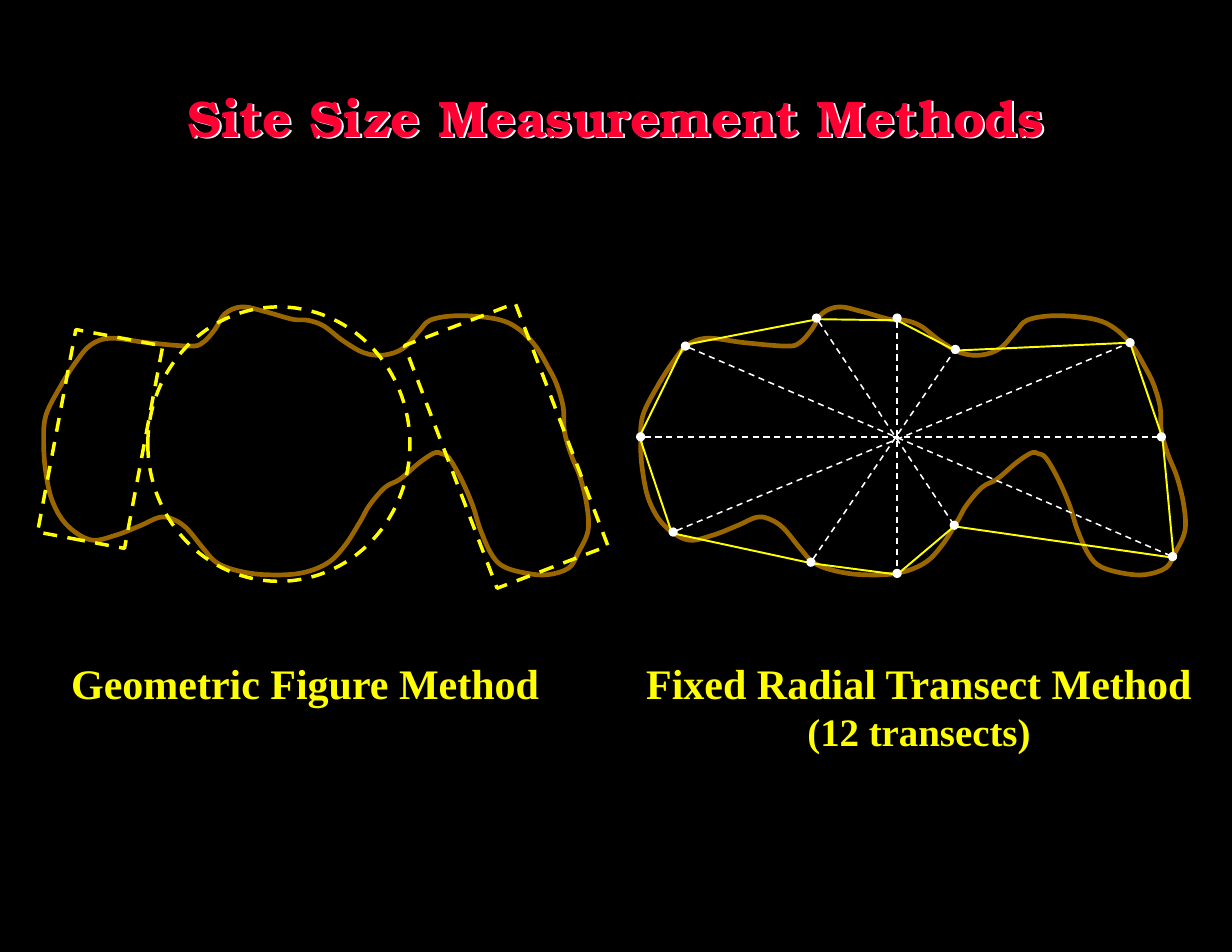
from lxml import etree
from pptx import Presentation
from pptx import util as u
from pptx.dml.color import RGBColor
from pptx.enum import dml, shapes, text
from pptx.oxml.ns import qn

BLACK = RGBColor(0x00, 0x00, 0x00)
WHITE = RGBColor(0xFF, 0xFF, 0xFF)
YELLOW = RGBColor(0xFF, 0xFF, 0x00)
BROWN = RGBColor(0x99, 0x66, 0x00)
RED = RGBColor(0xFF, 0x00, 0x33)

# Points on the edge of the site, clockwise; the right site is shifted
SITE = [
    (0.99, 3.02), (1.32, 3.06), (1.69, 3.09), (1.81, 3.06), (1.92, 2.94),
    (2.01, 2.8), (2.16, 2.74), (2.36, 2.78), (2.61, 2.85), (2.75, 2.86),
    (2.89, 2.91), (3.06, 3.04), (3.25, 3.15), (3.43, 3.17), (3.6, 3.11),
    (3.74, 2.96), (3.84, 2.86), (4.05, 2.82), (4.31, 2.83), (4.51, 2.87),
    (4.66, 2.96), (4.79, 3.1), (4.89, 3.27), (4.97, 3.43), (5.03, 3.64),
    (5.04, 3.85), (5.1, 4.06), (5.18, 4.26), (5.24, 4.51), (5.25, 4.74),
    (5.16, 4.94), (5.08, 5.07), (4.9, 5.13), (4.71, 5.12), (4.5, 5.06),
    (4.39, 4.95), (4.29, 4.73), (4.22, 4.51), (4.12, 4.28), (4.01, 4.09),
    (3.94, 4.05), (3.89, 4.04), (3.8, 4.09), (3.71, 4.16), (3.57, 4.28),
    (3.44, 4.35), (3.3, 4.51), (3.22, 4.65), (3.08, 4.87), (2.92, 5.03),
    (2.67, 5.12), (2.35, 5.13), (2.1, 5.09), (1.93, 5.02), (1.81, 4.89),
    (1.66, 4.71), (1.53, 4.63), (1.42, 4.62), (1.26, 4.69), (1.03, 4.78),
    (0.81, 4.82), (0.6, 4.69), (0.47, 4.48), (0.41, 4.22), (0.39, 3.96),
    (0.41, 3.71), (0.54, 3.45), (0.68, 3.23), (0.81, 3.08),
]
SITE_SHIFT = 5.33

# Corners of the polygon that joins the transect ends
POLYGON = [
    (7.3, 2.85), (8.01, 2.86), (8.53, 3.13), (10.09, 3.06), (10.38, 3.91),
    (10.48, 4.98), (8.52, 4.7), (8.01, 5.13), (7.25, 5.03), (6, 4.76),
    (5.71, 3.9), (6.11, 3.08),
]
TRANSECTS = [
    ((6.12, 3.09), (10.47, 4.97)), ((6.01, 4.75), (10.09, 3.06)),
    ((7.24, 5.02), (8.53, 3.12)), ((5.72, 3.9), (10.37, 3.9)),
    ((7.29, 2.84), (8.52, 4.69)), ((8.01, 2.84), (8.01, 5.12)),
]


class Sketch:
    """Holds the style and the current slide."""

    title_font = "TeX Gyre Bonum"
    label_font = "Times New Roman"

    def __init__(self, deck):
        self.page = deck.slides.add_slide(deck.slide_layouts[5])
        fill = self.page.background.fill
        fill.solid()
        fill.fore_color.rgb = BLACK

    def span(self, para, words, size, font, color):
        para.alignment = text.PP_ALIGN.CENTER
        span = para.add_run()
        span.text = words
        span.font.size = u.Pt(size)
        span.font.name = font
        span.font.bold = True
        span.font.color.rgb = color

    def insets(self, frame):
        frame.margin_left = frame.margin_right = u.Inches(0.11)
        frame.margin_top = frame.margin_bottom = u.Inches(0.06)

    def stroke(self, line, color, width, dashed=False):
        line.color.rgb = color
        line.width = u.Pt(width)
        if dashed:
            line.dash_style = dml.MSO_LINE.DASH

    def title(self, words, left, top, width, height):
        box = self.page.shapes.title
        box.left, box.top = u.Inches(left), u.Inches(top)
        box.width, box.height = u.Inches(width), u.Inches(height)
        box.fill.background()
        self.insets(box.text_frame)
        box.text_frame.vertical_anchor = text.MSO_ANCHOR.MIDDLE
        self.span(box.text_frame.paragraphs[0], words, 33, self.title_font, RED)
        # White shadow, down to the right
        effects = etree.SubElement(box._element.spPr, qn("a:effectLst"))
        shadow = etree.SubElement(effects, qn("a:outerShdw"), dist=str(u.Pt(1.8)),
                                  dir="2700000", algn="ctr", rotWithShape="0")
        etree.SubElement(shadow, qn("a:srgbClr"), val=str(WHITE))

    def label(self, lines, left, top, width, height):
        box = self.page.shapes.add_textbox(
            u.Inches(left), u.Inches(top), u.Inches(width), u.Inches(height))
        frame = box.text_frame
        frame.word_wrap = False
        frame.auto_size = text.MSO_AUTO_SIZE.SHAPE_TO_FIT_TEXT
        self.insets(frame)
        for index, (words, size) in enumerate(lines):
            para = frame.add_paragraph() if index else frame.paragraphs[0]
            self.span(para, words, size, self.label_font, YELLOW)

    def figure(self, kind, left, top, width, height, rotation=0):
        shape = self.page.shapes.add_shape(
            kind, u.Inches(left), u.Inches(top), u.Inches(width), u.Inches(height))
        shape.rotation = rotation
        shape.shadow.inherit = False
        shape.fill.background()
        self.stroke(shape.line, YELLOW, 2.25, dashed=True)

    def outline(self, points, color, width):
        first, *rest = [(u.Inches(x), u.Inches(y)) for x, y in points]
        builder = self.page.shapes.build_freeform(*first, scale=1.0)
        builder.add_line_segments(rest + [first], close=True)
        shape = builder.convert_to_shape()
        shape.shadow.inherit = False
        shape.fill.background()
        self.stroke(shape.line, color, width)
        return shape

    def smooth(self, shape):
        """Turn the straight sides of a closed outline into Bezier curves."""
        sides = list(shape._element.iter(qn("a:lnTo")))
        knots = [(int(side[0].get("x")), int(side[0].get("y"))) for side in sides]
        count = len(knots)
        for index, side in enumerate(sides):
            before, start, end, after = (
                knots[(index + step) % count] for step in (-2, -1, 0, 1))
            leave = [s + (e - b) / 6 for b, s, e in zip(before, start, end)]
            arrive = [e - (a - s) / 6 for s, e, a in zip(start, end, after)]
            curve = etree.Element(qn("a:cubicBezTo"))
            for x, y in (leave, arrive, end):
                etree.SubElement(curve, qn("a:pt"), x=str(round(x)), y=str(round(y)))
            side.getparent().replace(side, curve)

    def transect(self, start, end):
        line = self.page.shapes.add_connector(
            shapes.MSO_CONNECTOR.STRAIGHT, *(u.Inches(value) for value in start + end))
        self.stroke(line.line, WHITE, 1, dashed=True)
        for tag in ("a:headEnd", "a:tailEnd"):
            etree.SubElement(line.line._get_or_add_ln(), qn(tag), type="oval")
        etree.SubElement(line._element.spPr, qn("a:effectLst"))


def main():
    deck = Presentation()
    deck.slide_width, deck.slide_height = u.Inches(11), u.Inches(8.5)
    sketch = Sketch(deck)
    sketch.title("Site Size Measurement Methods", 0.55, 0.38, 9.9, 1.32)

    # Left: geometric figures over the site
    sketch.smooth(sketch.outline(SITE, BROWN, 3))
    sketch.figure(shapes.MSO_SHAPE.RECTANGLE, 3.99, 2.82, 1.06, 2.32, 339.1)
    sketch.figure(shapes.MSO_SHAPE.OVAL, 1.32, 2.74, 2.34, 2.45)
    sketch.figure(shapes.MSO_SHAPE.RECTANGLE, 0.5, 3, 0.79, 1.84, 10.7)
    sketch.label([("Geometric Figure Method", 27)], 0.52, 5.81, 4.41, 0.56)

    # Right: radial transects across the same site
    sketch.label([("Fixed Radial Transect Method", 27), ("(12 transects)", 25)],
                 5.64, 5.81, 5.13, 0.98)
    sketch.smooth(sketch.outline([(x + SITE_SHIFT, y) for x, y in SITE], BROWN, 3))
    sketch.outline(POLYGON, YELLOW, 1.25)
    for start, end in TRANSECTS:
        sketch.transect(start, end)

    deck.save("out.pptx")


if __name__ == "__main__":
    main()
